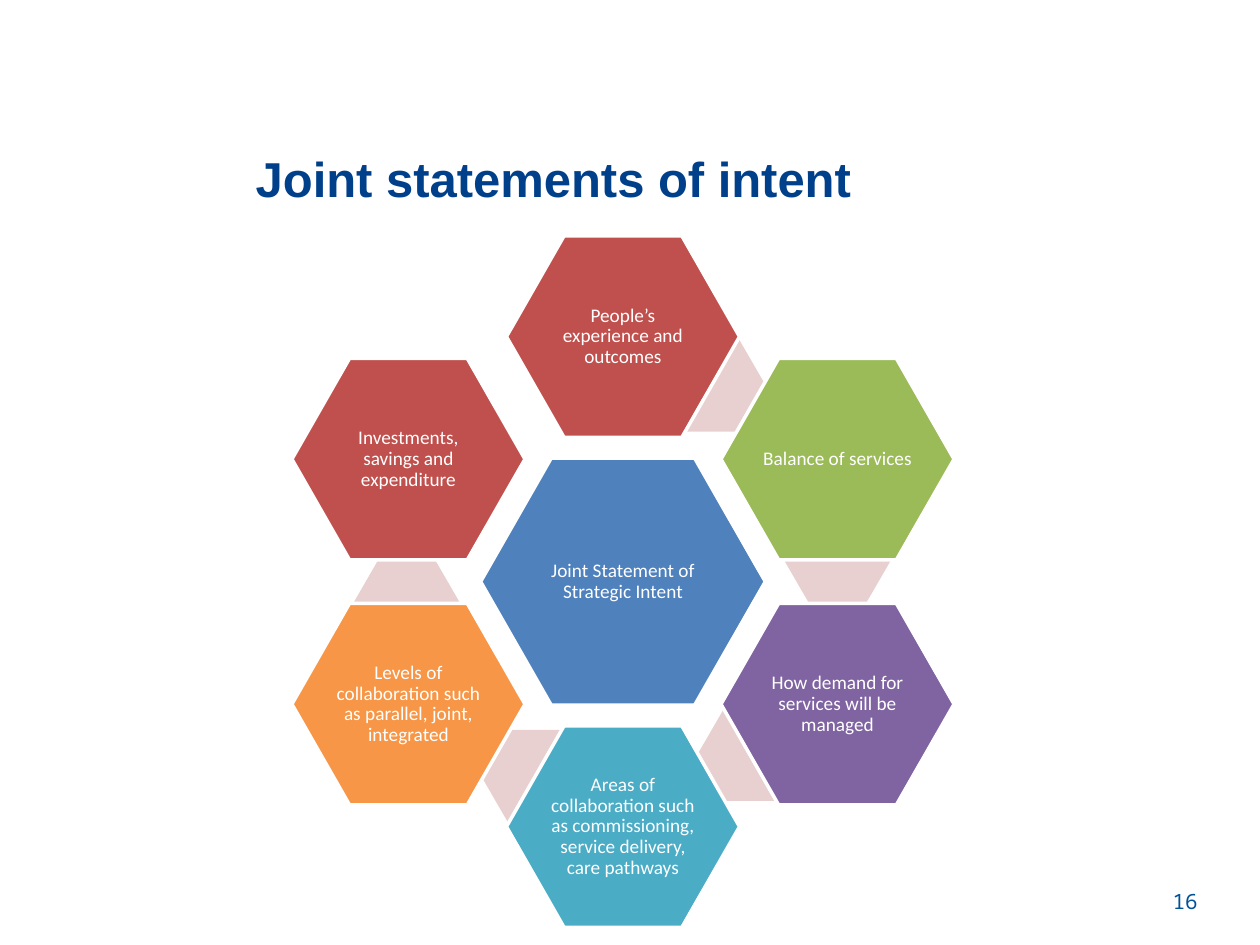
from pptx import Presentation
from pptx.dml.color import RGBColor
from pptx.enum.shapes import MSO_SHAPE as Shape
from pptx.enum.text import MSO_ANCHOR as Anchor, PP_ALIGN as Align
from pptx.util import Pt


def color(code):
    return RGBColor.from_string(code)


class Page:
    white, tint, navy, blue = "FFFFFF", "E8D0D0", "00408B", "00529B"

    def __init__(self, deck):
        self.slide = deck.slides.add_slide(deck.slide_layouts[6])

    def set_text(self, frame, words, face, size, tone, align, anchor,
                 bold=False):
        frame.word_wrap = True
        frame.vertical_anchor = anchor
        para = frame.paragraphs[0]
        para.text = words
        para.alignment = align
        font = para.font
        font.name, font.size, font.bold = face, Pt(size), bold
        font.color.rgb = color(tone)
        return para

    def label(self, x, y, w, h, *style, **extra):
        box = self.slide.shapes.add_textbox(Pt(x), Pt(y), Pt(w), Pt(h))
        self.set_text(box.text_frame, *style, **extra)

    def hexagon(self, x, y, w, h, fill, adjust):
        """Draw a hexagon centred on x, y."""
        hexa = self.slide.shapes.add_shape(
            Shape.HEXAGON, Pt(x - w / 2), Pt(y - h / 2), Pt(w), Pt(h))
        hexa.adjustments[0] = adjust
        hexa.shadow.inherit = False
        hexa.fill.solid()
        hexa.fill.fore_color.rgb = color(fill)
        hexa.line.fill.background()
        return hexa

    def link(self, x, y):
        self.hexagon(x, y, 61.2, 52.6, self.tint, 0.289)

    def cell(self, x, y, w, h, fill, words):
        hexa = self.hexagon(x, y, w, h, fill, 0.286)
        hexa.line.color.rgb = color(self.white)
        hexa.line.width = Pt(2)
        frame = hexa.text_frame
        frame.margin_left = frame.margin_right = Pt(1.5)
        frame.margin_top = frame.margin_bottom = Pt(1.5)
        para = self.set_text(frame, words, "Calibri", 11, self.white,
                             Align.CENTER, Anchor.MIDDLE)
        para.line_spacing = 0.9


def main():
    deck = Presentation()
    deck.slide_width, deck.slide_height = Pt(720), Pt(540)
    page = Page(deck)

    # Title and page number
    page.label(139, 26, 533, 96, "Joint statements of intent", "Arial", 28,
               page.navy, Align.LEFT, Anchor.BOTTOM, bold=True)
    page.label(541.5, 504, 150, 36, "16", "Noto Sans Mono", 12,
               page.blue, Align.RIGHT, Anchor.TOP)

    # Centre of the ring
    mid_x, mid_y = 356, 332.4
    page.cell(mid_x, mid_y, 162.7, 141.1, "4F81BD",
              "Joint Statement of Strategic Intent")

    # Ring, clockwise: column, row, fill, words, offset of the link behind
    step_x, step_y = 122.6, 70
    ring = [
        (0, -2, "C0504D", "People’s experience and outcomes", (51, -112)),
        (1, -1, "9BBB59", "Balance of services", (122.6, -12.4)),
        (1, 1, "8064A2", "How demand for services will be managed",
         (73, 99)),
        (0, 2, "4BACC6", "Areas of collaboration such as commissioning, "
         "service delivery, care pathways", (-50.5, 111)),
        (-1, 1, "F79646", "Levels of collaboration such as parallel, joint, "
         "integrated", (-123.6, 12.4)),
        (-1, -1, "C0504D", "Investments, savings and expenditure", None),
    ]
    for col, row, fill, words, shift in ring:
        if shift:
            page.link(mid_x + shift[0], mid_y + shift[1])
        page.cell(mid_x + col * step_x, mid_y + row * step_y,
                  133.2, 115.2, fill, words)

    deck.save("out.pptx")


if __name__ == "__main__":
    main()
